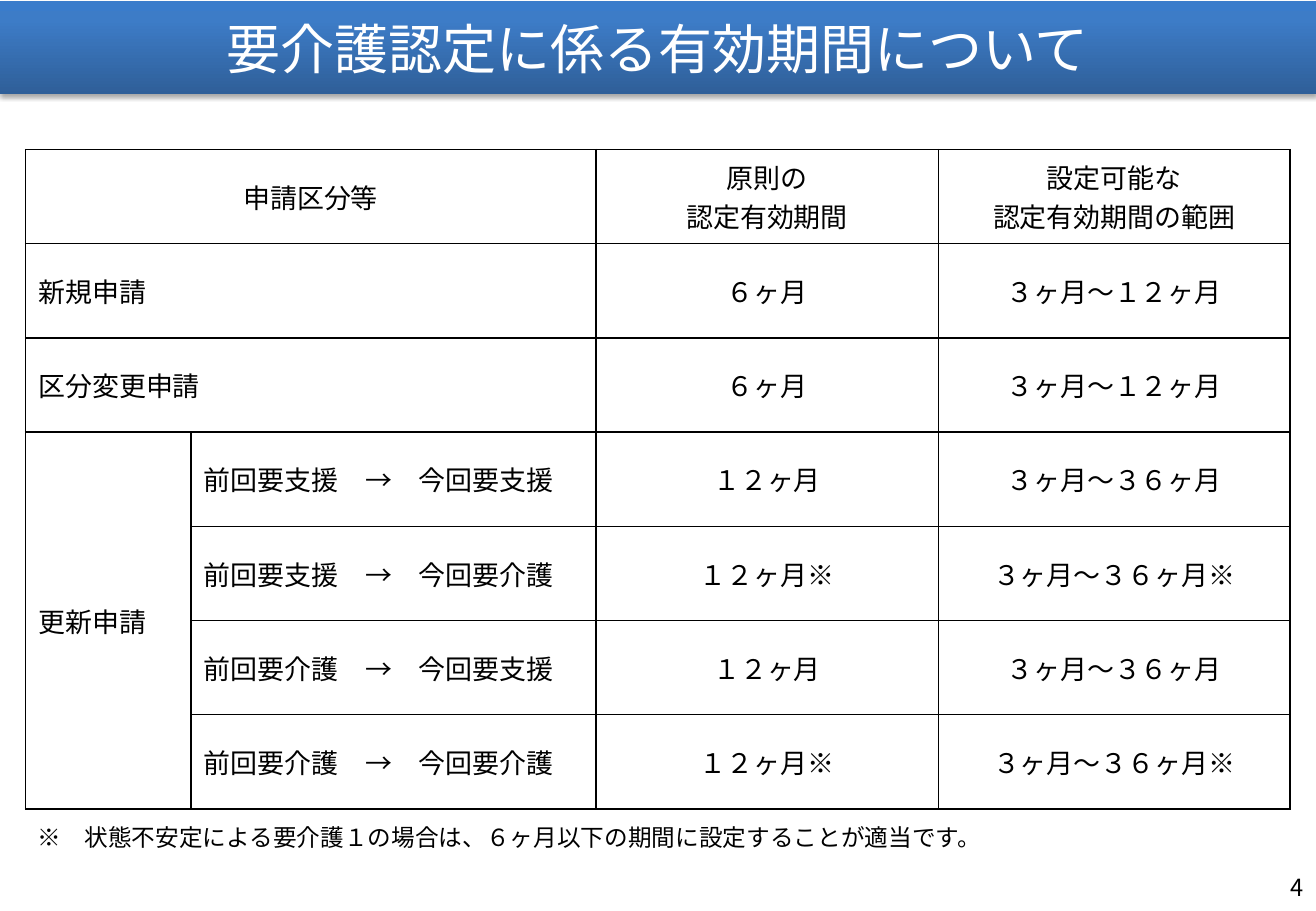
from copy import deepcopy
from dataclasses import dataclass

from lxml import etree
from pptx import Presentation
from pptx.dml.color import RGBColor
from pptx.enum.lang import MSO_LANGUAGE_ID
from pptx.enum.shapes import MSO_SHAPE
from pptx.enum.text import MSO_ANCHOR, PP_ALIGN
from pptx.oxml.ns import qn
from pptx.slide import Slide
from pptx.table import _Cell
from pptx.text.text import TextFrame
from pptx.util import Pt

LEFT, CENTER, RIGHT = PP_ALIGN.LEFT, PP_ALIGN.CENTER, PP_ALIGN.RIGHT
TOP, MIDDLE = MSO_ANCHOR.TOP, MSO_ANCHOR.MIDDLE
RECTANGLE = MSO_SHAPE.RECTANGLE
JAPANESE = MSO_LANGUAGE_ID.JAPANESE

BLACK = RGBColor(0x00, 0x00, 0x00)
WHITE = RGBColor(0xFF, 0xFF, 0xFF)
BANNER_STOPS = (
    (0, RGBColor(0x2F, 0x5F, 0x99)),
    (0.8, RGBColor(0x3D, 0x7C, 0xC7)),
    (1, RGBColor(0x3A, 0x7C, 0xCB)),
)

TABLE_FONT, TITLE_FONT, JAPANESE_FONT = "Arial", "Calibri", "Noto Sans CJK JP"
SLIDE_WIDTH, SLIDE_HEIGHT = 780, 540
COLUMN_WIDTHS = (98, 240, 203, 208.5)
ROW_HEIGHT = 55.85
BORDER_TAGS = ("a:lnL", "a:lnR", "a:lnT", "a:lnB")


@dataclass(frozen=True)
class TableCell:
    row: int
    column: int
    text: str
    align: PP_ALIGN = CENTER
    row_span: int = 1
    column_span: int = 1


@dataclass(frozen=True)
class TextBox:
    text: str
    left: float
    top: float
    width: float
    height: float
    align: PP_ALIGN
    anchor: MSO_ANCHOR
    line_spacing: float


PERIODS = (
    ("原則の\n認定有効期間", "設定可能な\n認定有効期間の範囲"),
    ("６ヶ月", "３ヶ月～１２ヶ月"),
    ("６ヶ月", "３ヶ月～１２ヶ月"),
    ("１２ヶ月", "３ヶ月～３６ヶ月"),
    ("１２ヶ月※", "３ヶ月～３６ヶ月※"),
    ("１２ヶ月", "３ヶ月～３６ヶ月"),
    ("１２ヶ月※", "３ヶ月～３６ヶ月※"),
)
TABLE_CELLS = [
    TableCell(0, 0, "申請区分等", column_span=2),
    TableCell(1, 0, "新規申請", LEFT, column_span=2),
    TableCell(2, 0, "区分変更申請", LEFT, column_span=2),
    TableCell(3, 0, "更新申請", LEFT, row_span=4),
    TableCell(3, 1, "前回要支援　→　今回要支援", LEFT),
    TableCell(4, 1, "前回要支援　→　今回要介護", LEFT),
    TableCell(5, 1, "前回要介護　→　今回要支援", LEFT),
    TableCell(6, 1, "前回要介護　→　今回要介護", LEFT),
] + [
    TableCell(row, column, text)
    for row, periods in enumerate(PERIODS)
    for column, text in enumerate(periods, start=2)
]
TEXT_BOXES = (
    TextBox(
        "※　状態不安定による要介護１の場合は、６ヶ月以下の期間に設定することが適当です。",
        15, 486.7, 566.6, 25, LEFT, TOP, 0.85,
    ),
    TextBox("4", 598, 511.2, 182, 28.8, RIGHT, MIDDLE, 1),
)


def write_text(
    text_frame: TextFrame,
    text: str,
    *,
    font_name: str,
    size: float,
    color: RGBColor = BLACK,
    align: PP_ALIGN = LEFT,
    line_spacing: float = 1,
) -> None:
    text_frame.word_wrap = True
    text_frame.text = text
    for paragraph in text_frame.paragraphs:
        paragraph.alignment = align
        paragraph.line_spacing = line_spacing
        for run in paragraph.runs:
            font = run.font
            font.name = font_name
            font.size = Pt(size)
            font.color.rgb = color
            font.language_id = JAPANESE
            latin = font._element.find(qn("a:latin"))
            east_asian = etree.Element(qn("a:ea"), typeface=JAPANESE_FONT)
            latin.addnext(east_asian)


def add_banner(slide: Slide) -> None:
    shape = slide.shapes.add_shape(RECTANGLE, 0, Pt(0.8), Pt(SLIDE_WIDTH), Pt(54.8))
    shape.line.fill.background()
    shape.fill.gradient()
    shape.fill.gradient_angle = 90
    properties = shape.element.spPr
    stop_list = properties.find(qn("a:gradFill")).find(qn("a:gsLst"))
    stop_list.append(deepcopy(stop_list[-1]))
    for stop, (position, color) in zip(shape.fill.gradient_stops, BANNER_STOPS):
        stop.position = position
        stop.color.rgb = color
    shape.shadow.inherit = False
    shadow = etree.SubElement(
        properties.find(qn("a:effectLst")), qn("a:outerShdw"),
        blurRad=str(Pt(3.1)), dist=str(Pt(1.8)), dir="5400000", rotWithShape="0",
    )
    shadow_color = etree.SubElement(shadow, qn("a:srgbClr"), val=str(BLACK))
    etree.SubElement(shadow_color, qn("a:alpha"), val="35000")
    shape.text_frame.vertical_anchor = MIDDLE
    write_text(
        shape.text_frame, "要介護認定に係る有効期間について",
        font_name=TITLE_FONT, size=32, color=WHITE, align=CENTER,
    )


def format_cell(cell: _Cell) -> None:
    cell.fill.background()
    cell.vertical_anchor = MIDDLE
    cell.margin_left = cell.margin_right = Pt(7.6)
    cell.margin_top = cell.margin_bottom = Pt(3.6)
    properties = cell._tc.get_or_add_tcPr()
    for index, tag in enumerate(BORDER_TAGS):
        border = etree.Element(qn(tag), w=str(Pt(1)))
        fill = etree.SubElement(border, qn("a:solidFill"))
        etree.SubElement(fill, qn("a:srgbClr"), val=str(BLACK))
        properties.insert(index, border)


def add_period_table(slide: Slide) -> None:
    row_count = len(PERIODS)
    table = slide.shapes.add_table(
        row_count, len(COLUMN_WIDTHS), Pt(15.2), Pt(88.6),
        Pt(sum(COLUMN_WIDTHS)), Pt(ROW_HEIGHT * row_count),
    ).table
    table.first_row = False
    table.horz_banding = False
    for column, width in zip(table.columns, COLUMN_WIDTHS):
        column.width = Pt(width)
    for row in table.rows:
        row.height = Pt(ROW_HEIGHT)
    for cell in table.iter_cells():
        format_cell(cell)
    for item in TABLE_CELLS:
        cell = table.cell(item.row, item.column)
        if item.row_span > 1 or item.column_span > 1:
            cell.merge(table.cell(
                item.row + item.row_span - 1, item.column + item.column_span - 1
            ))
        write_text(
            cell.text_frame, item.text, font_name=TABLE_FONT, size=16, align=item.align
        )


def add_text_box(slide: Slide, box: TextBox) -> None:
    shape = slide.shapes.add_textbox(
        Pt(box.left), Pt(box.top), Pt(box.width), Pt(box.height)
    )
    shape.text_frame.vertical_anchor = box.anchor
    write_text(
        shape.text_frame, box.text, font_name=JAPANESE_FONT, size=14,
        align=box.align, line_spacing=box.line_spacing,
    )


def main() -> None:
    presentation = Presentation()
    presentation.slide_width = Pt(SLIDE_WIDTH)
    presentation.slide_height = Pt(SLIDE_HEIGHT)
    slide = presentation.slides.add_slide(presentation.slide_layouts[6])
    add_period_table(slide)
    add_banner(slide)
    for box in TEXT_BOXES:
        add_text_box(slide, box)
    presentation.save("out.pptx")


if __name__ == "__main__":
    main()
